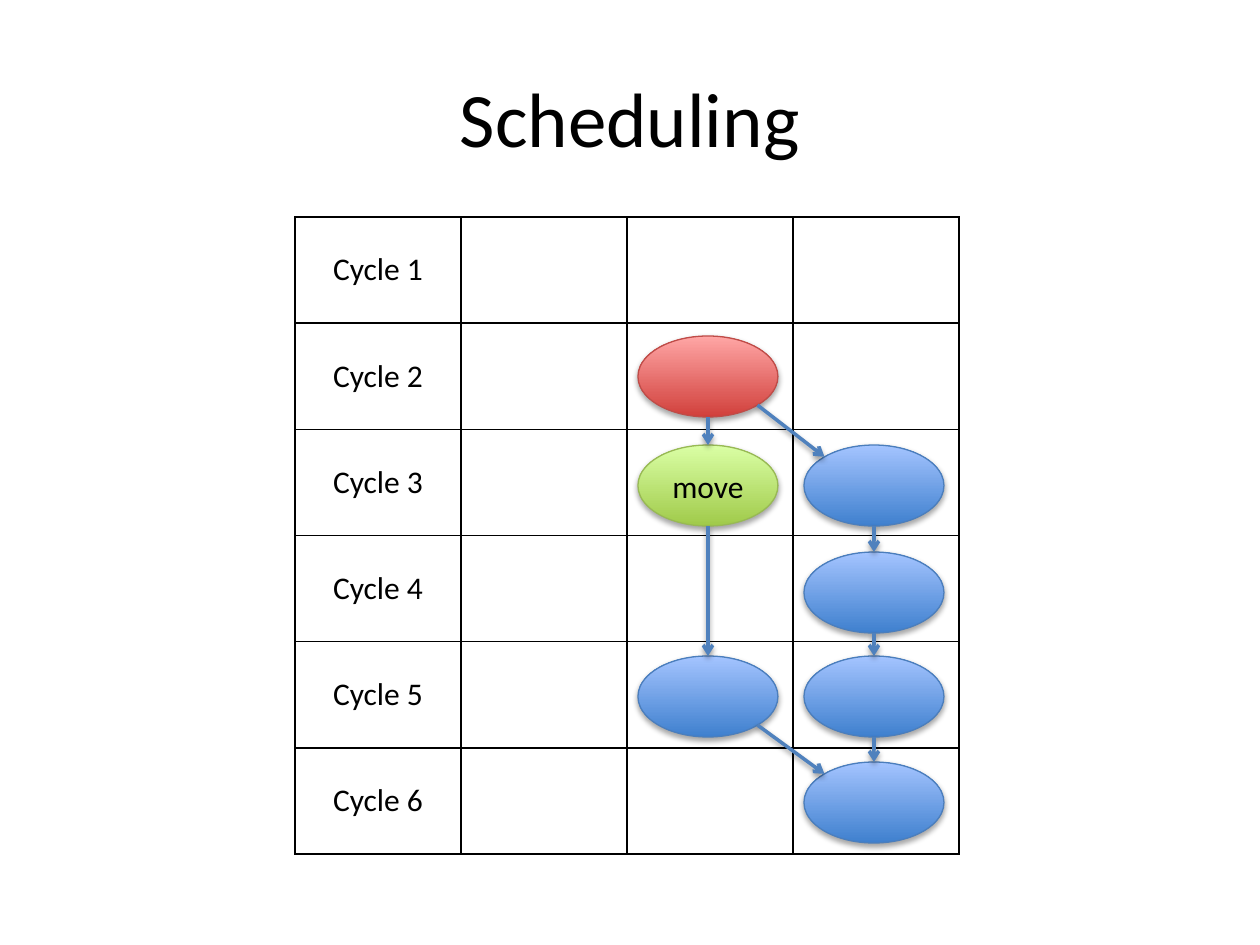
import dataclasses
import math

import pptx
import pptx.dml.color
import pptx.enum.shapes
import pptx.enum.text
import pptx.oxml
import pptx.oxml.ns
import pptx.util

PX = 914400 / 126
SLIDE_SIZE = (1260, 945)
COLUMNS, ROWS = 4, 6
TOP, BOTTOM, UPPER_LEFT, LOWER_RIGHT = 0, 4, 1, 5
SITE_DEGREES = {TOP: 270, UPPER_LEFT: 225, BOTTOM: 90, LOWER_RIGHT: 45}
NODE_SIZE = (140, 81)
NODE_INSET = 11

# name: (column, row, drop below the row's top edge, palette, label)
OPERATIONS = {
    "source": (2, 1, 13, "red", ""),
    "move": (2, 2, 16, "green", "move"),
    "left": (2, 4, 15, "blue", ""),
    "first": (3, 2, 16, "blue", ""),
    "second": (3, 3, 17, "blue", ""),
    "third": (3, 4, 15, "blue", ""),
    "result": (3, 5, 15, "blue", ""),
}
DEPENDENCIES = [
    ("source", "move", BOTTOM, TOP),
    ("source", "first", LOWER_RIGHT, UPPER_LEFT),
    ("move", "left", BOTTOM, TOP),
    ("first", "second", BOTTOM, TOP),
    ("second", "third", BOTTOM, TOP),
    ("third", "result", BOTTOM, TOP),
    ("left", "result", LOWER_RIGHT, UPPER_LEFT),
]


@dataclasses.dataclass(frozen=True)
class Theme:
    """Colours as (bottom, top, outline) palettes, and type sizes in points."""

    font: str = "Calibri"
    ink: str = "000000"
    arrow: str = "4F81BD"
    blue: tuple = ("3F80CE", "A4C4FF", "4B7EBC")
    red: tuple = ("D1403C", "FFA6A5", "BF4C48")
    green: tuple = ("A0CA4A", "DAFFA5", "98B955")
    title_size: int = 44
    body_size: int = 18


THEME = Theme()


def emu(*lengths):
    """Turn px lengths into EMU."""
    return [round(length * PX) for length in lengths]


def rgb(value):
    """Return a colour from its hex form."""
    return pptx.dml.color.RGBColor.from_string(value)


def write(frame, text, size=THEME.body_size, color=THEME.ink):
    """Put one centred line of text in a text frame."""
    frame.word_wrap = True
    paragraph = frame.paragraphs[0]
    paragraph.alignment = pptx.enum.text.PP_ALIGN.CENTER
    run = paragraph.add_run()
    run.text = text
    run.font.name = THEME.font
    run.font.size = pptx.util.Pt(size)
    run.font.color.rgb = rgb(color)


def add_shadow(part, distance, opacity):
    """Give a shape or connector a soft shadow straight below it."""
    namespace = pptx.oxml.ns.nsdecls("a")
    part._element.spPr.append(pptx.oxml.parse_xml(
        f'<a:effectLst {namespace}><a:outerShdw blurRad="40000" dist="{distance}" '
        f'dir="5400000" rotWithShape="0"><a:srgbClr val="{THEME.ink}">'
        f'<a:alpha val="{opacity * 1000}"/></a:srgbClr></a:outerShdw></a:effectLst>'))


def add_borders(cell):
    """Rule all four sides of a table cell."""
    namespace = pptx.oxml.ns.nsdecls("a")
    properties = cell._tc.get_or_add_tcPr()
    for position, side in enumerate(("lnL", "lnR", "lnT", "lnB")):
        properties.insert(position, pptx.oxml.parse_xml(
            f'<a:{side} {namespace} w="12700"><a:solidFill>'
            f'<a:srgbClr val="{THEME.ink}"/></a:solidFill></a:{side}>'))


def add_title(slide, box):
    """Place the slide's heading in its box."""
    heading = slide.shapes.add_textbox(*emu(*box)).text_frame
    heading.vertical_anchor = pptx.enum.text.MSO_ANCHOR.MIDDLE
    write(heading, "Scheduling", size=THEME.title_size)


def add_cycles(slide, box):
    """Place the table of cycles in its box."""
    cycles = slide.shapes.add_table(ROWS, COLUMNS, *emu(*box)).table
    cycles.first_row = cycles.horz_banding = False
    for row in range(ROWS):
        for column in range(COLUMNS):
            cell = cycles.cell(row, column)
            cell.fill.background()
            cell.vertical_anchor = pptx.enum.text.MSO_ANCHOR.MIDDLE
            add_borders(cell)
        write(cycles.cell(row, 0).text_frame, f"Cycle {row + 1}")


def add_operation(slide, box, palette, label):
    """Draw one operation as a shaded ellipse."""
    bottom, top, outline = palette
    operation = slide.shapes.add_shape(pptx.enum.shapes.MSO_SHAPE.OVAL, *emu(*box))
    operation.fill.gradient()
    operation.fill.gradient_angle = 90
    for stop, color in zip(operation.fill.gradient_stops, (bottom, top)):
        stop.color.rgb = rgb(color)
    operation.line.color.rgb = rgb(outline)
    operation.line.width = pptx.util.Pt(0.75)
    add_shadow(operation, distance=23000, opacity=35)
    if label:
        operation.text_frame.vertical_anchor = pptx.enum.text.MSO_ANCHOR.MIDDLE
        write(operation.text_frame, label)
    return operation


def site_point(operation, site):
    """Return the place of a connection site on an ellipse."""
    angle = math.radians(SITE_DEGREES[site])
    return (round(operation.left + operation.width * (1 + math.cos(angle)) / 2),
            round(operation.top + operation.height * (1 + math.sin(angle)) / 2))


def add_dependency(slide, giver, taker, leave, enter):
    """Draw an arrow glued to two operations."""
    arrow = slide.shapes.add_connector(
        pptx.enum.shapes.MSO_CONNECTOR.STRAIGHT,
        *site_point(giver, leave), *site_point(taker, enter))
    namespace = pptx.oxml.ns.nsdecls("a")
    glue = arrow._element.nvCxnSpPr.cNvCxnSpPr
    for end, operation, site in (("stCxn", giver, leave), ("endCxn", taker, enter)):
        glue.append(pptx.oxml.parse_xml(
            f'<a:{end} {namespace} id="{operation.shape_id}" idx="{site}"/>'))
    arrow.line.color.rgb = rgb(THEME.arrow)
    arrow.line.width = pptx.util.Pt(2)
    arrow.line._get_or_add_ln().append(
        pptx.oxml.parse_xml(f'<a:tailEnd {namespace} type="arrow"/>'))
    add_shadow(arrow, distance=20000, opacity=38)


def add_schedule(slide, box):
    """Place the operations and their arrows over the cells of a box."""
    left, top, width, height = box
    operations = {}
    for name, (column, row, drop, palette, label) in OPERATIONS.items():
        place = (left + column * width // COLUMNS + NODE_INSET,
                 top + row * height // ROWS + drop)
        operations[name] = add_operation(
            slide, place + NODE_SIZE, getattr(THEME, palette), label)
    for giver, taker, leave, enter in DEPENDENCIES:
        add_dependency(slide, operations[giver], operations[taker], leave, enter)


def main():
    """Build the slide and save it."""
    deck = pptx.Presentation()
    deck.slide_width, deck.slide_height = emu(*SLIDE_SIZE)
    slide = deck.slides.add_slide(deck.slide_layouts[6])
    grid = (295, 217, 664, 637)
    add_title(slide, (63, 38, 1134, 157))
    add_cycles(slide, grid)
    add_schedule(slide, grid)
    deck.save("out.pptx")


if __name__ == "__main__":
    main()
